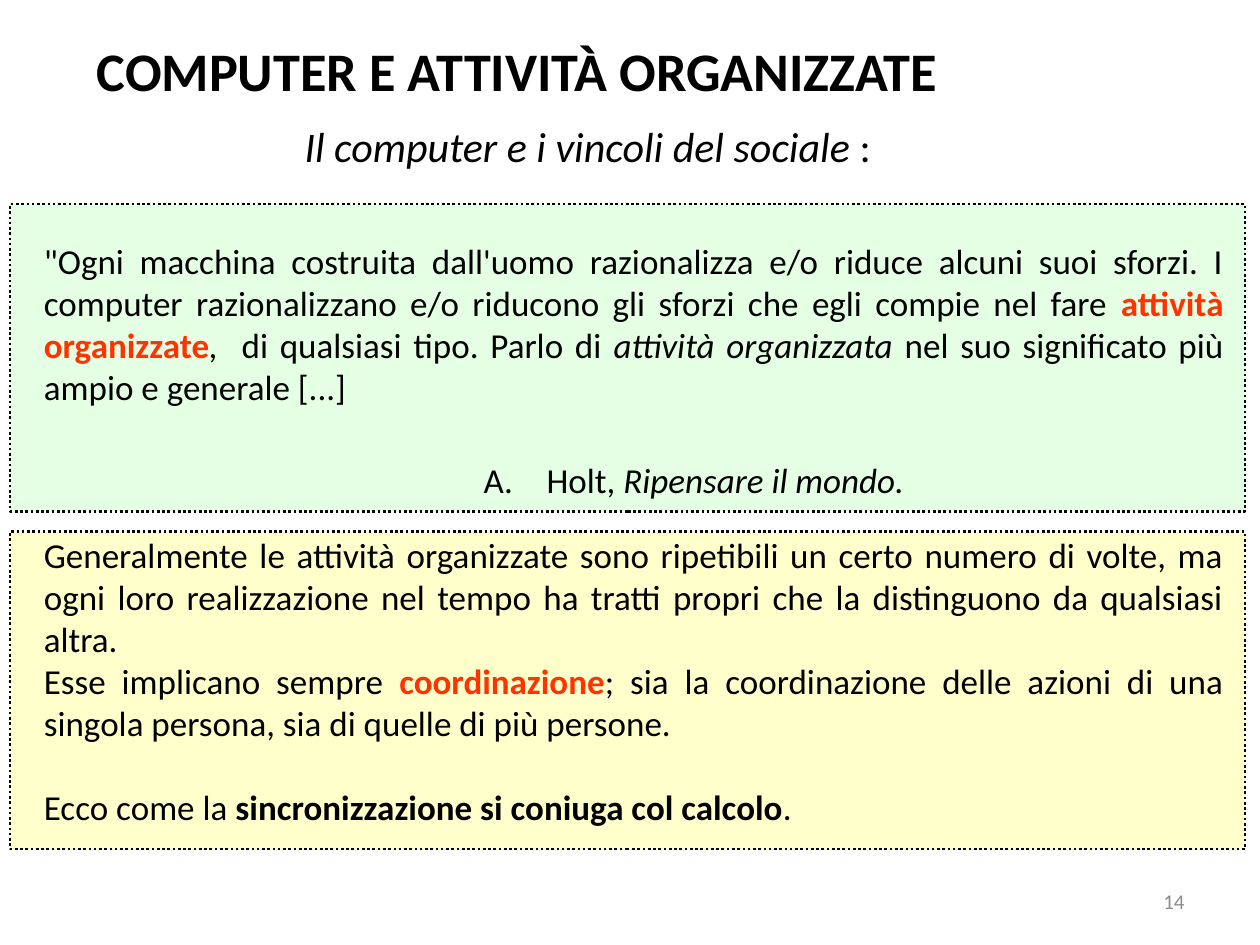
"""Build the slide on computers and organised activities."""
from lxml import etree
from pptx import Presentation
from pptx import util as u
from pptx.dml.color import RGBColor
from pptx.enum import dml, shapes, text
from pptx.oxml.ns import qn

THEME = {
    "font": "Calibri",
    "ink": "000000", "accent": "FF3300", "muted": "8C8C8C",
    "green": "CCFFCC", "yellow": "FFFF99",
    "title": 31, "subtitle": 24, "body": 20, "number": 12,
}
BOLD, ITALIC = {"bold": True}, {"italic": True}
KEY = {"bold": True, "color": "accent"}
JUSTIFY = {"alignment": text.PP_ALIGN.JUSTIFY}


def add_panel(top, height, color):
    sp = s.shapes.add_shape(shapes.MSO_SHAPE.RECTANGLE, u.Pt(5.8), u.Pt(top), u.Pt(705.6), u.Pt(height))
    sp.shadow.inherit = False
    sp.fill.solid()
    sp.fill.fore_color.rgb = RGBColor.from_string(THEME[color])
    clr = sp._element.spPr.find(qn("a:solidFill"))[0]
    etree.SubElement(clr, qn("a:alpha"), val="50000")
    sp.line.color.rgb = RGBColor.from_string(THEME["ink"])
    for name, value in {"width": u.Pt(1.5), "dash_style": dml.MSO_LINE.ROUND_DOT}.items():
        setattr(sp.line, name, value)


def add_text(box, size, paragraphs, color="ink", **frame):
    tf = s.shapes.add_textbox(*map(u.Pt, box)).text_frame
    for name, value in {"word_wrap": True, **frame}.items():
        setattr(tf, name, value)
    for i, (fmt, runs) in enumerate(paragraphs):
        p = tf.add_paragraph() if i else tf.paragraphs[0]
        for name, value in fmt.items():
            setattr(p, name, value)
        for words, style in runs:
            r = p.add_run()
            r.text = words
            look = {"name": THEME["font"], "size": u.Pt(THEME[size]), "color": color, **style}
            r.font.color.rgb = RGBColor.from_string(THEME[look.pop("color")])
            for name, value in look.items():
                setattr(r.font, name, value)
    return tf


prs = Presentation()
prs.slide_width, prs.slide_height = u.Pt(720), u.Pt(540)
s = prs.slides.add_slide(prs.slide_layouts[6])

add_panel(303.8, 181.4, "yellow")
add_panel(116.6, 175.7, "green")

add_text((516.2, 500.4, 167.8, 28.8), "number",
         [({"alignment": text.PP_ALIGN.RIGHT}, [("14", {})])],
         color="muted", vertical_anchor=text.MSO_ANCHOR.MIDDLE)

add_text((18, 133.2, 688.3, 367.2), "body", [
    (JUSTIFY, [
        ("\"Ogni macchina costruita dall'uomo razionalizza e/o riduce alcuni suoi sforzi. "
         "I computer razionalizzano e/o riducono gli sforzi che egli compie nel fare ", {}),
        ("attività organizzate", KEY),
        (", ", ITALIC),
        (" di qualsiasi tipo. Parlo di ", {}),
        ("attività organizzata", ITALIC),
        (" nel suo significato più ampio e generale [...]", {})]),
    ({**JUSTIFY, "space_before": u.Pt(72)}, [
        ("Generalmente le attività organizzate sono ripetibili un certo numero di volte, "
         "ma ogni loro realizzazione nel tempo ha tratti propri che la distinguono da qualsiasi altra.", {})]),
    (JUSTIFY, [
        ("Esse implicano sempre ", {}),
        ("coordinazione", KEY),
        ("; sia la coordinazione delle azioni di una singola persona, sia di quelle di più persone.", {})]),
    ({**JUSTIFY, "space_before": u.Pt(24)}, [
        ("Ecco come la ", {}),
        ("sincronizzazione si coniuga col calcolo", BOLD),
        (".", {})]),
])

add_text((48.2, 18, 642.2, 44.6), "title", [({}, [("COMPUTER E ATTIVITÀ ORGANIZZATE", BOLD)])])

tf = add_text((269.3, 258.5, 295.2, 31), "body",
              [(JUSTIFY, [("Holt, ", {}), ("Ripensare il mondo.", ITALIC)])])
pPr = tf.paragraphs[0]._p.get_or_add_pPr()
for name, value in {"marL": u.Pt(36), "indent": -u.Pt(36)}.items():
    pPr.set(name, str(value))
etree.SubElement(pPr, qn("a:buFont"), typeface=THEME["font"])
etree.SubElement(pPr, qn("a:buAutoNum"), type="alphaUcPeriod")

add_text((167, 65.5, 372.2, 36), "subtitle",
         [({}, [("Il computer e i vincoli del sociale ", ITALIC), (":", {})])], word_wrap=False)

prs.save("out.pptx")
